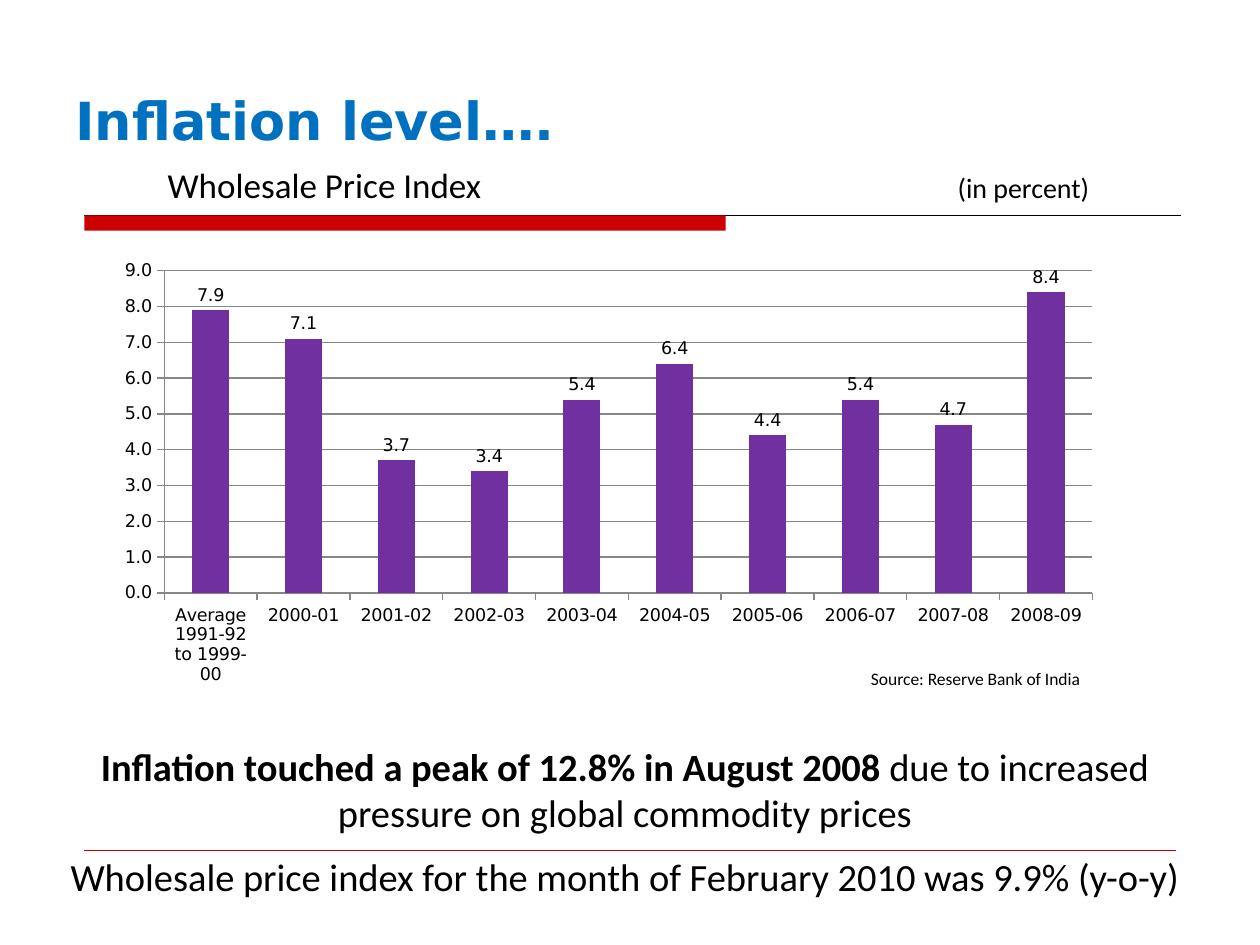
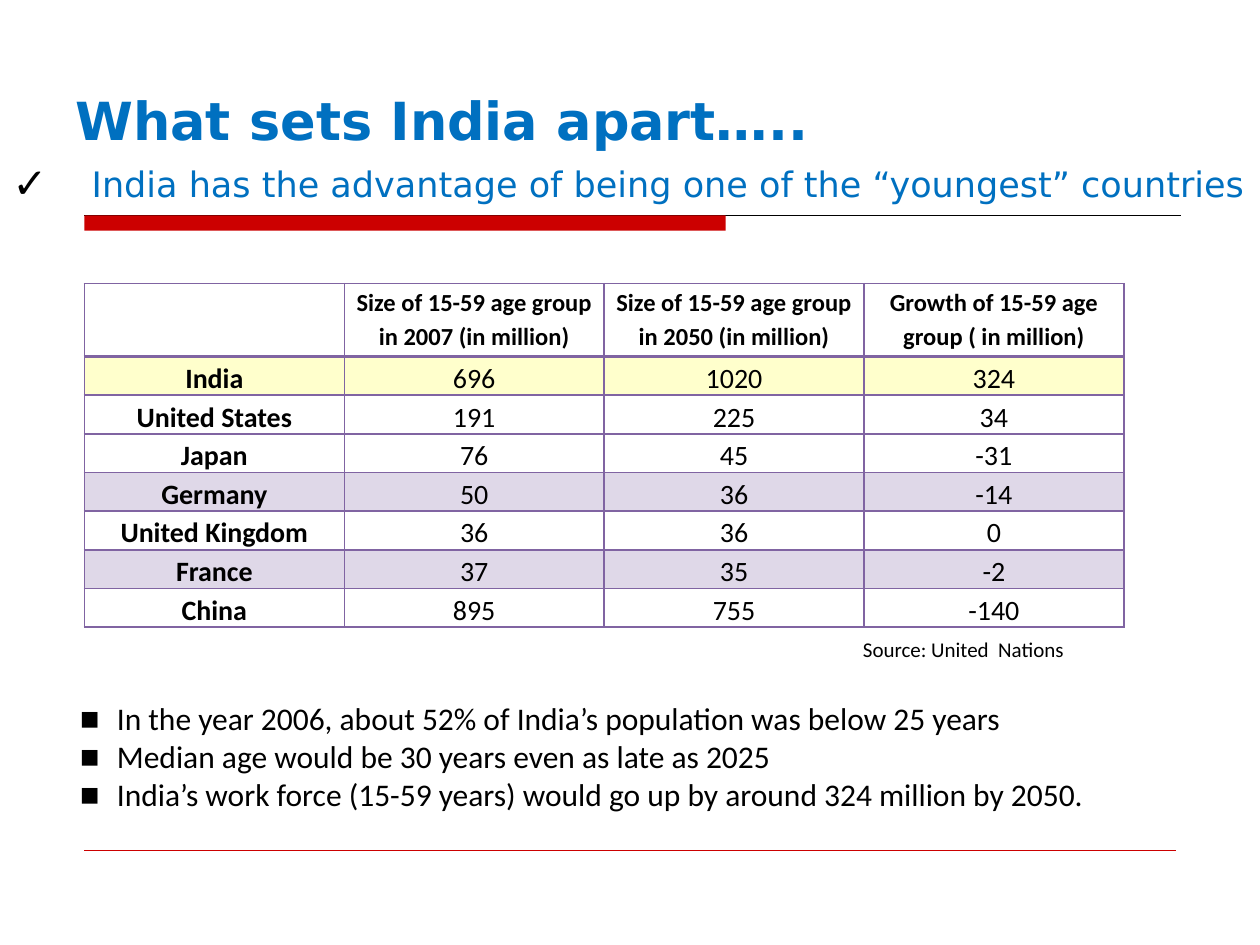
import pptx
import pptx.chart.data
import pptx.dml.color
import pptx.enum.chart
import pptx.enum.shapes
import pptx.enum.text
import pptx.oxml.ns
import pptx.util
from lxml import etree

Inches, Pt = pptx.util.Inches, pptx.util.Pt
ALIGN, ANCHOR = pptx.enum.text.PP_ALIGN, pptx.enum.text.MSO_ANCHOR
qn = pptx.oxml.ns.qn

# Shared look
RED, BLUE, BLACK, WHITE = "CC0000", "0070C0", "000000", "FFFFFF"
PURPLE, LAVENDER, YELLOW, BORDER, GRID = "7030A0", "DFD8E8", "FFFFCC", "8064A2", "878787"
BODY_FONT, TITLE_FONT = "Calibri", "DejaVu Sans"
TITLE_BOX = (0.5, 0.5, 9, 0.75)
BAND_BOX = (0.67, 1.71, 8.7, 0.12)
FOOTER_BOX = (0.67, 6.75, 8.66, 0)


def color(value):
    return pptx.dml.color.RGBColor.from_string(value)


def inches(box):
    return [Inches(length) for length in box]


def set_format(target, values):
    for name, value in values.items():
        setattr(target, name, value)


def add_span(para, text, size, bold=False, ink=BLACK, font=BODY_FONT):
    span = para.add_run()
    span.text = text
    set_format(span.font, {"size": Pt(size), "bold": bold, "name": font})
    span.font.color.rgb = color(ink)


def add_text(page, box, paragraphs, frame_format=None, **para_format):
    """Each paragraph is a list of spans: (text, size, bold, ink, font)."""
    frame = page.shapes.add_textbox(*inches(box)).text_frame
    set_format(frame, {"word_wrap": True, **(frame_format or {})})
    for index, spans in enumerate(paragraphs):
        para = frame.add_paragraph() if index else frame.paragraphs[0]
        set_format(para, para_format)
        for span in spans:
            add_span(para, *span)
    return frame


def add_bullet(para, sign, indent, percent=100):
    props = para._p.get_or_add_pPr()
    props.set("marL", str(Inches(indent)))
    props.set("indent", str(-Inches(indent)))
    ink = etree.SubElement(props, qn("a:buClr"))
    etree.SubElement(ink, qn("a:srgbClr"), val=BLACK)
    etree.SubElement(props, qn("a:buSzPct"), val=str(percent * 1000))
    etree.SubElement(props, qn("a:buFont"), typeface=TITLE_FONT)
    etree.SubElement(props, qn("a:buChar"), char=sign)


def add_rule(page, box, ink, width):
    left, top, length, _ = box
    rule = page.shapes.add_connector(
        pptx.enum.shapes.MSO_CONNECTOR.STRAIGHT, *inches((left, top, left + length, top)))
    rule.line.color.rgb = color(ink)
    rule.line.width = Pt(width)
    etree.SubElement(rule._element.spPr, qn("a:effectLst"))


def add_band(page, box):
    left, top, width, height = box
    add_rule(page, box, BLACK, 0.75)
    band = page.shapes.add_shape(pptx.enum.shapes.MSO_SHAPE.RECTANGLE,
                                 *inches((left, top, 5.09, height)))
    band.shadow.inherit = False
    band.fill.solid()
    band.fill.fore_color.rgb = color(RED)
    band.line.fill.background()


def add_page(deck, title):
    page = deck.slides.add_slide(deck.slide_layouts[6])
    add_band(page, BAND_BOX)
    add_rule(page, FOOTER_BOX, RED, 0.25)
    add_text(page, TITLE_BOX, [[(title, 30, True, BLUE, TITLE_FONT)]],
             {"vertical_anchor": ANCHOR.BOTTOM})
    return page


# Inflation slide
def add_chart_heading(page, box):
    frame = add_text(page, box, [[("Wholesale Price Index\t", 20), ("(in percent)", 16)]],
                     {"margin_left": Inches(0.16)})
    tabs = etree.SubElement(frame.paragraphs[0]._p.get_or_add_pPr(), qn("a:tabLst"))
    etree.SubElement(tabs, qn("a:tab"), pos=str(Inches(6.27)), algn="l")


def add_price_chart(page, box):
    prices = {"Average 1991-92 to 1999-00": 7.9, "2000-01": 7.1, "2001-02": 3.7,
              "2002-03": 3.4, "2003-04": 5.4, "2004-05": 6.4, "2005-06": 4.4,
              "2006-07": 5.4, "2007-08": 4.7, "2008-09": 8.4}
    data = pptx.chart.data.CategoryChartData(number_format="0.0")
    data.categories = list(prices)
    data.add_series("Series 1", list(prices.values()))
    chart = page.shapes.add_chart(pptx.enum.chart.XL_CHART_TYPE.COLUMN_CLUSTERED,
                                  *inches(box), data).chart
    set_format(chart, {"has_legend": False, "has_title": False})
    set_format(chart.font, {"size": Pt(10), "name": TITLE_FONT})
    chart.font.color.rgb = color(BLACK)

    # Columns and their labels
    plot = chart.plots[0]
    set_format(plot, {"gap_width": 150, "vary_by_categories": False, "has_data_labels": True})
    set_format(plot.data_labels, {
        "show_value": True, "number_format": "0.0", "number_format_is_linked": False,
        "position": pptx.enum.chart.XL_LABEL_POSITION.OUTSIDE_END})
    columns = plot.series[0].format.fill
    columns.solid()
    columns.fore_color.rgb = color(PURPLE)

    # Axes
    values = chart.value_axis
    set_format(values, {"minimum_scale": 0, "maximum_scale": 9, "major_unit": 1,
                        "has_major_gridlines": True})
    set_format(values.tick_labels, {"number_format": "0.0", "number_format_is_linked": False})
    for axis in (values, chart.category_axis):
        axis.major_tick_mark = pptx.enum.chart.XL_TICK_MARK.OUTSIDE
    for line in (values.format.line, chart.category_axis.format.line,
                 values.major_gridlines.format.line):
        line.color.rgb = color(GRID)
        line.width = Pt(0.75)


def add_inflation_notes(page, box):
    frame = add_text(page, box, [
        [("Inflation touched a peak of 12.8% in August 2008 ", 22, True),
         ("due to increased pressure on global commodity prices", 22)],
        [("Wholesale price index for the month of February 2010 was 9.9% (y-o-y)", 22)],
    ], alignment=ALIGN.CENTER)
    frame.paragraphs[1].space_before = Pt(10)


def build_inflation_page(deck):
    page = add_page(deck, "Inflation level….")
    add_price_chart(page, (0.83, 2, 8, 3.5))
    add_chart_heading(page, (1.17, 1.25, 7.58, 0.44))
    add_text(page, (5, 5.25, 3.67, 0.27), [[("Source: Reserve Bank of India", 10)]],
             alignment=ALIGN.RIGHT)
    add_inflation_notes(page, (0.25, 5.85, 9.42, 1.65))


# Population slide
def set_borders(cell, widths):
    props = cell._tc.get_or_add_tcPr()
    for index, (side, width) in enumerate(widths.items()):
        line = etree.Element(qn("a:ln" + side), w=str(Pt(width)))
        fill = etree.SubElement(line, qn("a:solidFill"))
        etree.SubElement(fill, qn("a:srgbClr"), val=BORDER)
        props.insert(index, line)


def add_age_table(page, box):
    rows = [
        ("", "Size of 15-59 age group in 2007 (in million)",
         "Size of 15-59 age group in 2050 (in million)",
         "Growth of 15-59 age group ( in million)"),
        ("India", "696", "1020", "324"),
        ("United States", "191", "225", "34"),
        ("Japan", "76", "45", "-31"),
        ("Germany", "50", "36", "-14"),
        ("United Kingdom", "36", "36", "0"),
        ("France", "37", "35", "-2"),
        ("China", "895", "755", "-140"),
    ]
    fills = {"India": YELLOW, "Germany": LAVENDER, "France": LAVENDER}
    table = page.shapes.add_table(len(rows), len(rows[0]), *inches(box)).table
    set_format(table, {"first_row": False, "horz_banding": False})
    for column in table.columns:
        column.width = Inches(box[2] / len(rows[0]))
    for row_index, row in enumerate(rows):
        header = row_index == 0
        table.rows[row_index].height = Inches(0.58 if header else 0.28)
        for column_index, text in enumerate(row):
            cell = table.cell(row_index, column_index)
            set_format(cell, {"margin_left": Inches(0.07), "margin_right": Inches(0.07),
                              "margin_top": 0, "margin_bottom": 0})
            cell.fill.solid()
            cell.fill.fore_color.rgb = color(fills.get(row[0], WHITE))
            set_borders(cell, {"L": 1, "R": 1, "T": 2.25 if row_index == 1 else 1,
                               "B": 2.25 if header else 1})
            if text:
                para = cell.text_frame.paragraphs[0]
                set_format(para, {"alignment": ALIGN.CENTER, "line_spacing": 1.15})
                add_span(para, text, 14 if header else 16, header or column_index == 0)


def add_subtitle(page, box):
    text = "India has the advantage of being one of the “youngest” countries"
    frame = add_text(page, box, [[(text, 20, False, BLUE, TITLE_FONT)]],
                     {"margin_top": Inches(0.12)})
    add_bullet(frame.paragraphs[0], "✓", 0.63, 120)


def add_age_notes(page, box):
    notes = ["In the year 2006, about 52% of India’s population was below 25 years",
             "Median age would be 30 years even as late as 2025",
             "India’s work force (15-59 years) would go up by around 324 million by 2050."]
    frame = add_text(page, box, [[(note, 18)] for note in notes])
    for para in frame.paragraphs:
        add_bullet(para, "▪", 0.3)


def build_population_page(deck):
    page = add_page(deck, "What sets India apart…..")
    add_subtitle(page, (0, 1.17, 10, 0.58))
    add_age_notes(page, (0.53, 5.5, 9, 1.01))
    add_age_table(page, (0.67, 2.25, 8.25, 2.72))
    add_text(page, (6.75, 5, 2.25, 0.3), [[("Source: United  Nations", 12)]])


def main():
    deck = pptx.Presentation()
    set_format(deck, {"slide_width": Inches(10), "slide_height": Inches(7.5)})
    build_inflation_page(deck)
    build_population_page(deck)
    deck.save("out.pptx")


if __name__ == "__main__":
    main()
